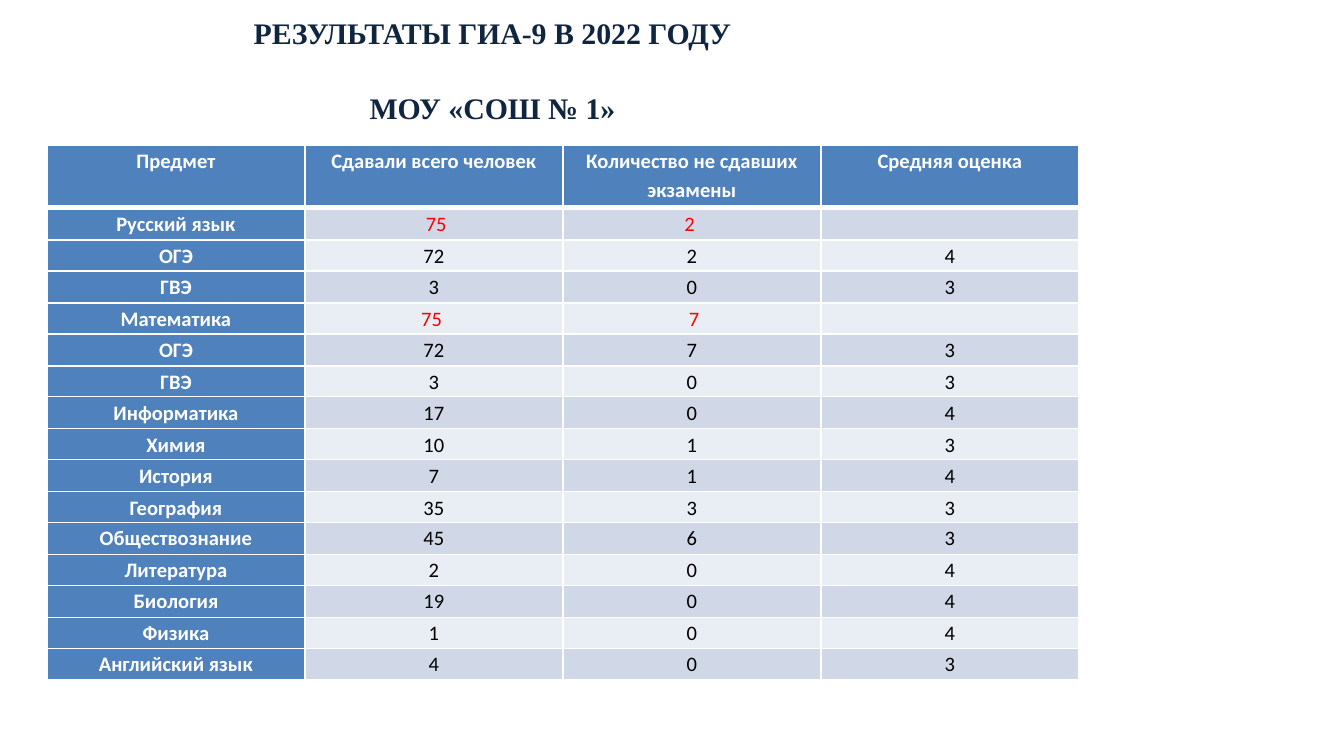
import typing

import lxml.etree
import pptx
import pptx.dml.color
import pptx.enum.text
import pptx.oxml.ns
import pptx.util

SCALE = 914400 / 134.4
NAVY = pptx.dml.color.RGBColor(0x10, 0x25, 0x3F)
BLUE = pptx.dml.color.RGBColor(0x4F, 0x81, 0xBD)
BAND_DARK = pptx.dml.color.RGBColor(0xD0, 0xD8, 0xE8)
BAND_LIGHT = pptx.dml.color.RGBColor(0xE9, 0xED, 0xF4)
WHITE = pptx.dml.color.RGBColor(0xFF, 0xFF, 0xFF)
BLACK = pptx.dml.color.RGBColor(0x00, 0x00, 0x00)
RED = pptx.dml.color.RGBColor(0xFF, 0x00, 0x00)

COL_W = 258
HEADER_H = 63
CENTER = pptx.enum.text.PP_ALIGN.CENTER
TITLE_PARAGRAPH = {"alignment": CENTER, "space_after": pptx.util.Pt(21)}
TITLE_FONT = {"name": "Times New Roman", "size": pptx.util.Pt(16), "bold": True}
CELL_PARAGRAPH = {"alignment": CENTER, "line_spacing": 1.15}
CELL_FONT = {"name": "Calibri", "size": pptx.util.Pt(11)}


class Subject(typing.NamedTuple):
    name: str
    taken: str
    failed: str
    grade: str
    is_total: bool = False


TITLE = ["РЕЗУЛЬТАТЫ ГИА-9 В 2022 ГОДУ", "МОУ «СОШ № 1»"]
HEADER = ["Предмет", "Сдавали всего человек", "Количество не сдавших экзамены", "Средняя оценка"]
SUBJECTS = [
    Subject("Русский язык", " 75", "2 ", "", True),
    Subject("ОГЭ", "72", "2", "4"),
    Subject("ГВЭ", "3", "0", "3"),
    Subject("Математика", "75 ", " 7", "", True),
    Subject("ОГЭ", "72", "7", "3"),
    Subject("ГВЭ", "3", "0", "3"),
    Subject("Информатика", "17", "0", "4"),
    Subject("Химия", "10", "1", "3"),
    Subject("История", "7", "1", "4"),
    Subject("География", "35", "3", "3"),
    Subject("Обществознание", "45", "6", "3"),
    Subject("Литература", "2", "0", "4"),
    Subject("Биология", "19", "0", "4"),
    Subject("Физика", "1", "0", "4"),
    Subject("Английский язык", "4", "0", "3"),
]


def px(n: int) -> int:
    return round(n * SCALE)


def apply(target: typing.Any, values: dict) -> None:
    for name, value in values.items():
        setattr(target, name, value)


def write(p, text: str, paragraph: dict, font: dict, color) -> None:
    apply(p, paragraph)
    if not text:
        end = lxml.etree.SubElement(p._p, pptx.oxml.ns.qn("a:endParaRPr"))
        end.set("sz", str(round(font["size"].pt * 100)))
        return
    r = p.add_run()
    r.text = text
    apply(r.font, font)
    r.font.color.rgb = color


def add_borders(cell, top: int, bottom: int) -> None:
    tc_pr = cell._tc.get_or_add_tcPr()
    for side, width in {"L": 1, "R": 1, "T": top, "B": bottom}.items():
        ln = lxml.etree.SubElement(tc_pr, pptx.oxml.ns.qn(f"a:ln{side}"), w=str(pptx.util.Pt(width)))
        fill = lxml.etree.SubElement(ln, pptx.oxml.ns.qn("a:solidFill"))
        lxml.etree.SubElement(fill, pptx.oxml.ns.qn("a:srgbClr"), val=str(WHITE))


def fill_cell(cell, text: str, fill, color, bold: bool, top: int = 1, bottom: int = 1) -> None:
    margins = {"margin_left": px(9), "margin_right": px(9), "margin_top": 0, "margin_bottom": 0}
    apply(cell, margins)
    add_borders(cell, top, bottom)
    cell.fill.solid()
    cell.fill.fore_color.rgb = fill
    write(cell.text_frame.paragraphs[0], text, CELL_PARAGRAPH, {**CELL_FONT, "bold": bold}, color)


def add_title(s) -> None:
    tf = s.shapes.add_textbox(px(207), px(8), px(571), px(125)).text_frame
    apply(tf, {"word_wrap": True, "auto_size": pptx.enum.text.MSO_AUTO_SIZE.SHAPE_TO_FIT_TEXT})
    for i, line in enumerate(TITLE):
        p = tf.add_paragraph() if i else tf.paragraphs[0]
        write(p, line, TITLE_PARAGRAPH, TITLE_FONT, NAVY)


def add_results(s) -> None:
    heights = [HEADER_H] + [32 - i % 2 for i in range(len(SUBJECTS))]
    frame = s.shapes.add_table(
        len(heights), len(HEADER), px(47), px(145), px(COL_W * len(HEADER)), px(sum(heights))
    )
    table = frame.table
    for col in table.columns:
        col.width = px(COL_W)
    for row, height in zip(table.rows, heights):
        row.height = px(height)
    for c, text in enumerate(HEADER):
        fill_cell(table.cell(0, c), text, BLUE, WHITE, True, bottom=3)
    for i, subject in enumerate(SUBJECTS):
        top = 1 if i else 3
        band = BAND_LIGHT if i % 2 else BAND_DARK
        color = RED if subject.is_total else BLACK
        fill_cell(table.cell(i + 1, 0), subject.name, BLUE, WHITE, True, top)
        for c, value in enumerate([subject.taken, subject.failed, subject.grade], 1):
            fill_cell(table.cell(i + 1, c), value, band, color, False, top)


def main() -> None:
    prs = pptx.Presentation()
    apply(prs, {"slide_width": px(1344), "slide_height": px(756)})
    s = prs.slides.add_slide(prs.slide_layouts[6])
    add_title(s)
    add_results(s)
    prs.save("out.pptx")


if __name__ == "__main__":
    main()
